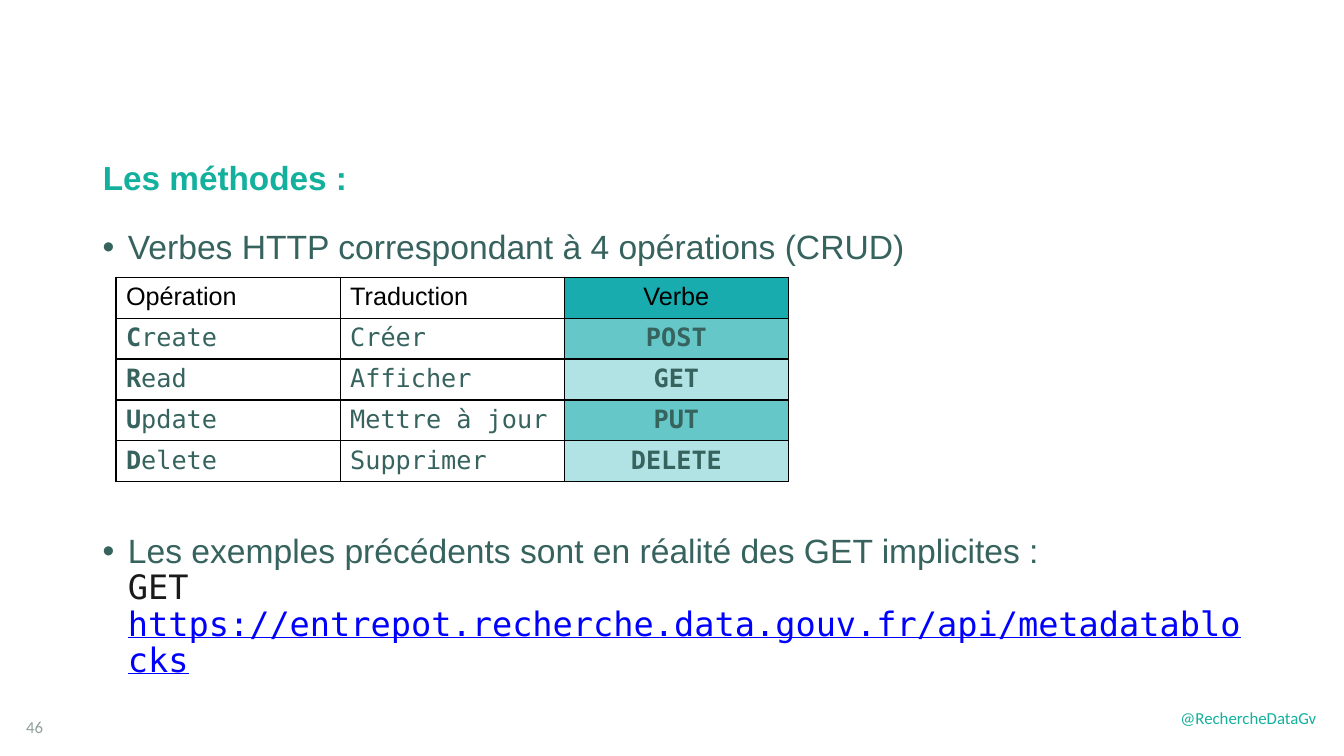
from dataclasses import dataclass

from lxml import etree
from pptx import Presentation
from pptx.dml.color import RGBColor
from pptx.enum.text import MSO_ANCHOR, MSO_AUTO_SIZE, PP_ALIGN
from pptx.oxml.ns import qn
from pptx.util import Inches, Pt

LEFT, CENTER = PP_ALIGN.LEFT, PP_ALIGN.CENTER
TOP, MIDDLE = MSO_ANCHOR.TOP, MSO_ANCHOR.MIDDLE
NO_AUTOFIT = MSO_AUTO_SIZE.NONE
SANS, MONO, SMALL = "Arial", "DejaVu Sans Mono", "Calibri"
GREEN, DARK, GREY = "12B09D", "37635F", "919F9D"
BLACK, INK, LINK, TEAL = "000000", "1A1A1A", "0000FF", "00A3A6"


@dataclass
class Label:
    text: str
    left: float
    top: float
    width: float
    height: float
    color: str
    anchor: MSO_ANCHOR


@dataclass
class Operation:
    name: str
    translation: str
    verb: str


LABELS = [
    Label("@RechercheDataGv", 11.61, 6.97, 1.62, 0.3, GREEN, TOP),
    Label("46", 0.16, 7.01, 0.65, 0.4, GREY, MIDDLE),
]
HEADINGS = ["Opération", "Traduction", "Verbe"]
OPERATIONS = [
    Operation("Create", "Créer", "POST"),
    Operation("Read", "Afficher", "GET"),
    Operation("Update", "Mettre à jour", "PUT"),
    Operation("Delete", "Supprimer", "DELETE"),
]


def rgb(color: str) -> RGBColor:
    return RGBColor.from_string(color)


def add_span(para, text: str, color: str, **formats) -> None:
    span = para.add_run()
    span.text = text
    span.font.color.rgb = rgb(color)
    for name, value in formats.items():
        setattr(span.font, name, value)


def set_frame(box, anchor: MSO_ANCHOR):
    frame = box.text_frame
    settings = {"word_wrap": True, "auto_size": NO_AUTOFIT, "vertical_anchor": anchor}
    for name, value in settings.items():
        setattr(frame, name, value)
    return frame


def add_box(page, left: float, top: float, width: float, height: float):
    return page.shapes.add_textbox(Inches(left), Inches(top), Inches(width), Inches(height))


def add_label(page, label: Label) -> None:
    box = add_box(page, label.left, label.top, label.width, label.height)
    para = set_frame(box, label.anchor).paragraphs[0]
    add_span(para, label.text, label.color, name=SMALL, size=Pt(12))


def set_title(page) -> None:
    title = page.shapes.title
    place = {"left": 0.92, "top": 1.62, "width": 5.39, "height": 0.4}
    for name, value in place.items():
        setattr(title, name, Inches(value))
    para = set_frame(title, TOP).paragraphs[0]
    para.alignment = LEFT
    para.line_spacing = 0.7
    add_span(para, "Les méthodes :", GREEN, name=SANS, size=Pt(23.8), bold=True)


def add_bullet(para, text: str, gap: float) -> None:
    properties = para._p.get_or_add_pPr()
    properties.set("marL", str(Inches(0.25)))
    properties.set("indent", str(Inches(-0.25)))
    etree.SubElement(properties, qn("a:buFont")).set("typeface", SANS)
    etree.SubElement(properties, qn("a:buChar")).set("char", "•")
    para.line_spacing = 0.9
    para.space_before = Pt(gap)
    add_span(para, text, DARK, name=SANS, size=Pt(24))


def add_body(page) -> None:
    frame = set_frame(add_box(page, 0.92, 2.24, 11.51, 4.58), TOP)
    add_bullet(frame.paragraphs[0], "Verbes HTTP correspondant à 4 opérations (CRUD)", 0)
    # The second bullet leaves room for the table
    para = frame.add_paragraph()
    add_bullet(para, "Les exemples précédents sont en réalité des GET implicites :", 191)
    para.add_line_break()
    code = {"name": MONO, "size": Pt(24)}
    add_span(para, "GET ", INK, **code)
    address = "https://entrepot.recherche.data.gouv.fr/api/metadatablocks"
    add_span(para, address, LINK, underline=True, **code)


def set_borders(cell) -> None:
    properties = cell._tc.get_or_add_tcPr()
    for position, side in enumerate(("a:lnL", "a:lnR", "a:lnT", "a:lnB")):
        line = etree.Element(qn(side), w=str(Pt(1)))
        fill = etree.SubElement(line, qn("a:solidFill"))
        etree.SubElement(fill, qn("a:srgbClr"), val=BLACK)
        properties.insert(position, line)


def set_tint(cell, opacity: int) -> None:
    cell.fill.solid()
    cell.fill.fore_color.rgb = rgb(TEAL)
    color = cell._tc.tcPr.find(qn("a:solidFill")).find(qn("a:srgbClr"))
    etree.SubElement(color, qn("a:alpha"), val=str(opacity * 1000))


def add_operations(page) -> None:
    rows, columns = len(OPERATIONS) + 1, len(HEADINGS)
    frame = page.shapes.add_table(
        rows, columns, Inches(1.15), Inches(2.75), Inches(6.67), Inches(2.03))
    table = frame.table
    table.first_row = table.horz_banding = False

    # Fills and borders
    for row in range(rows):
        for column in range(columns):
            cell = table.cell(row, column)
            if column == columns - 1:
                set_tint(cell, 90 if row == 0 else 60 if row % 2 else 30)
                cell.text_frame.paragraphs[0].alignment = CENTER
            else:
                cell.fill.background()
            set_borders(cell)

    # Wording
    for column, heading in enumerate(HEADINGS):
        para = table.cell(0, column).text_frame.paragraphs[0]
        add_span(para, heading, BLACK, name=SANS, size=Pt(18), bold=False)
    code = {"name": MONO, "size": Pt(18)}
    for row, operation in enumerate(OPERATIONS, start=1):
        name, translation, verb = (
            table.cell(row, column).text_frame.paragraphs[0] for column in range(columns))
        add_span(name, operation.name[0], DARK, bold=True, **code)
        add_span(name, operation.name[1:], DARK, bold=False, **code)
        add_span(translation, operation.translation, DARK, bold=False, **code)
        add_span(verb, operation.verb, DARK, bold=True, **code)


def main() -> None:
    deck = Presentation()
    deck.slide_width, deck.slide_height = Inches(13.33), Inches(7.5)
    title_only = deck.slide_layouts[5]
    page = deck.slides.add_slide(title_only)
    for label in LABELS:
        add_label(page, label)
    set_title(page)
    add_body(page)
    add_operations(page)
    deck.save("out.pptx")


if __name__ == "__main__":
    main()
